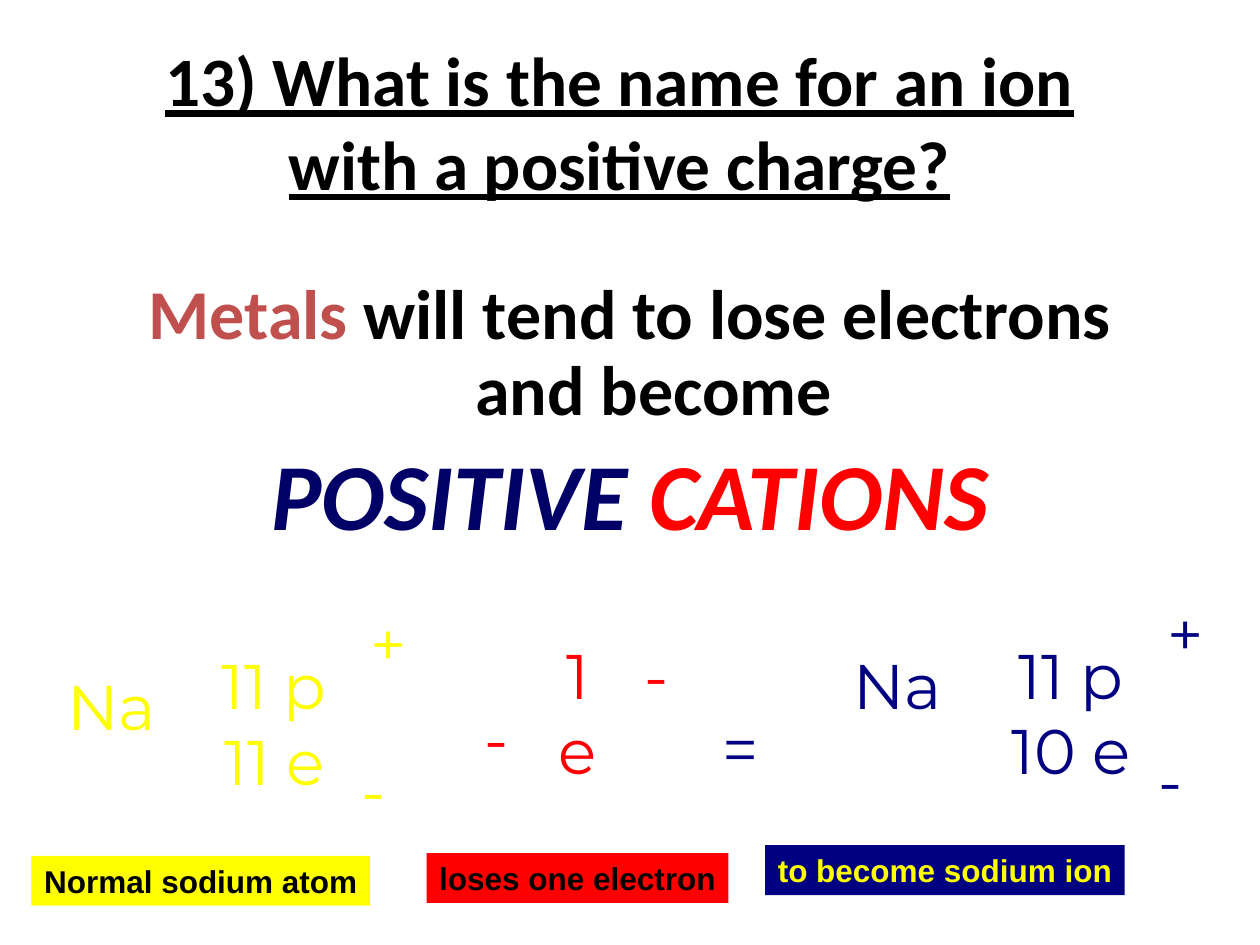
from pptx import Presentation
from pptx.dml.color import RGBColor
from pptx.enum.shapes import MSO_SHAPE
from pptx.enum.text import MSO_ANCHOR, MSO_AUTO_SIZE as AutoSize, PP_ALIGN
from pptx.util import Emu, Pt

EMU_PER_PX = 9525
COLORS = {
    "black": "000000",
    "brick": "C0504D",
    "ink": "000066",
    "red": "FF0000",
    "yellow": "FFFF00",
    "navy": "000080",
}


def px(value):
    return Emu(value * EMU_PER_PX)


def rgb(name):
    return RGBColor.from_string(COLORS[name])


def write(paragraph, text, font="Calibri", size=36, color="black",
          bold=False, italic=False, underline=False):
    """Add one centred, formatted run to a paragraph."""
    paragraph.alignment = PP_ALIGN.CENTER
    run = paragraph.add_run()
    run.text = text
    style = run.font
    style.name, style.size = font, Pt(size)
    style.bold, style.italic, style.underline = bold, italic, underline
    style.color.rgb = rgb(color)


class Deck:
    symbol_font = "Montserrat"
    label_font = "Arial"

    def __init__(self, width, height):
        self.presentation = Presentation()
        self.presentation.slide_width = px(width)
        self.presentation.slide_height = px(height)
        self.slide = None

    def add_slide(self):
        layout = self.presentation.slide_layouts[5]
        self.slide = self.presentation.slides.add_slide(layout)

    def title(self, text, left, top, width, height):
        shape = self.slide.shapes.title
        shape.left, shape.top = px(left), px(top)
        shape.width, shape.height = px(width), px(height)
        frame = shape.text_frame
        frame.auto_size = AutoSize.NONE
        frame.vertical_anchor = MSO_ANCHOR.MIDDLE
        write(frame.paragraphs[0], text, size=39.6, bold=True, underline=True)

    def body(self, lines, left, top, width, height):
        """Each line is a list of (text, format) runs."""
        box = self.slide.shapes.add_textbox(px(left), px(top), px(width), px(height))
        frame = box.text_frame
        frame.word_wrap = True
        for index, runs in enumerate(lines):
            paragraph = frame.add_paragraph() if index else frame.paragraphs[0]
            paragraph.line_spacing = 0.9
            paragraph.space_before = Pt(0.2 * runs[0][1]["size"])
            properties = paragraph._p.get_or_add_pPr()
            properties.set("marL", str(px(36)))
            properties.set("indent", str(-px(36)))
            for text, style in runs:
                write(paragraph, text, bold=True, **style)

    def group(self):
        return self.slide.shapes.add_group_shape()

    def symbol(self, group, lines, color, left, top, width, height):
        box = group.shapes.add_textbox(px(left), px(top), px(width), px(height))
        frame = box.text_frame
        frame.word_wrap = False
        for index, text in enumerate(lines):
            paragraph = frame.add_paragraph() if index else frame.paragraphs[0]
            write(paragraph, text, font=self.symbol_font, color=color)

    def particle(self, group, color, counts, left, top, element_left, element_top):
        """Draw an element symbol, its proton and electron counts and their signs."""
        self.symbol(group, ["Na"], color, element_left, element_top, 120, 132)
        self.symbol(group, counts, color, left, top, 112, 136)
        self.symbol(group, ["+"], color, left + 120, top - 32, 24, 48)
        self.symbol(group, ["-"], color, left + 112, top + 80, 40, 20)

    def label(self, group, text, fill, color, left, top, width):
        shape = group.shapes.add_shape(
            MSO_SHAPE.RECTANGLE, px(left), px(top), px(width), px(38))
        shape.shadow.inherit = False
        shape.fill.solid()
        shape.fill.fore_color.rgb = rgb(fill)
        shape.line.fill.background()
        frame = shape.text_frame
        frame.word_wrap = False
        frame.auto_size = AutoSize.SHAPE_TO_FIT_TEXT
        frame.vertical_anchor = MSO_ANCHOR.TOP
        write(frame.paragraphs[0], text, font=self.label_font, size=18,
              color=color, bold=True)


def main():
    deck = Deck(960, 720)
    deck.add_slide()
    deck.title("13) What is the name for an ion with a positive charge?",
               64, 32, 816, 120)
    deck.body([
        [("Metals", {"size": 40, "color": "brick"}),
         (" will tend to lose electrons and become", {"size": 40})],
        [("POSITIVE ", {"size": 54, "color": "ink", "italic": True}),
         ("CATIONS", {"size": 54, "color": "red", "italic": True})],
    ], 72, 208, 816, 240)

    atom = deck.group()
    deck.particle(atom, "yellow", ["11 p", "11 e"], 153, 488, 25, 504)
    deck.label(atom, "Normal sodium atom", "yellow", "black", 24, 652, 258)

    electron = deck.group()
    deck.symbol(electron, ["-"], "red", 360, 528, 32, 16)
    deck.symbol(electron, ["1e"], "red", 408, 480, 64, 136)
    deck.symbol(electron, ["-"], "red", 480, 480, 40, 20)
    deck.label(electron, "loses one electron", "red", "black", 325, 650, 230)

    ion = deck.group()
    deck.symbol(ion, ["="], "navy", 528, 536, 72, 36)
    deck.particle(ion, "navy", ["11 p", "10 e"], 760, 480, 624, 488)
    deck.label(ion, "to become sodium ion", "navy", "yellow", 583, 644, 274)

    deck.presentation.save("out.pptx")


if __name__ == "__main__":
    main()
